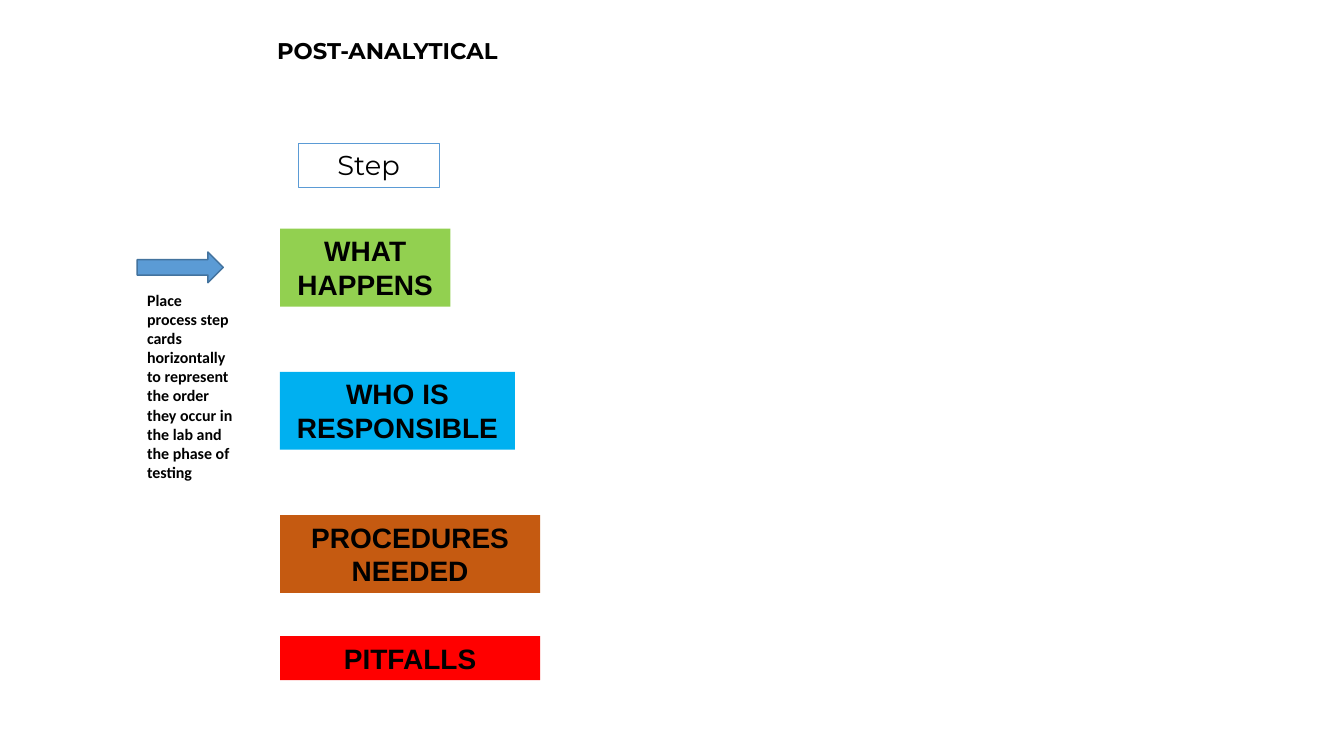
"""Build the post-analytical process step slide."""
from dataclasses import dataclass
from typing import Optional

import pptx
import pptx.dml.color
import pptx.enum.shapes
import pptx.enum.text
import pptx.shapes.autoshape
import pptx.slide
import pptx.util

Pt = pptx.util.Pt
RGBColor = pptx.dml.color.RGBColor
PP_ALIGN = pptx.enum.text.PP_ALIGN
MSO_ANCHOR = pptx.enum.text.MSO_ANCHOR
MSO_AUTO_SIZE = pptx.enum.text.MSO_AUTO_SIZE
MSO_SHAPE = pptx.enum.shapes.MSO_SHAPE

BLACK = RGBColor(0x00, 0x00, 0x00)
BLUE = RGBColor(0x5B, 0x9B, 0xD5)
DARK_BLUE = RGBColor(0x43, 0x73, 0x9E)
GREEN = RGBColor(0x92, 0xD0, 0x50)
SKY = RGBColor(0x00, 0xB0, 0xF0)
BROWN = RGBColor(0xC5, 0x5A, 0x11)
RED = RGBColor(0xFF, 0x00, 0x00)

CARD_LEFT = 200
CARD_TOP = 163.4
CARD_PITCH = 102.25
ONE_LINE = 31.6
TWO_LINES = 55.6


@dataclass(frozen=True)
class Card:
    text: str
    left: float
    top: float
    width: float
    height: float
    fill: Optional[RGBColor] = None
    line: Optional[RGBColor] = None
    font: str = "Arial"
    size: float = 20
    bold: bool = True


CARDS = [
    Card("Step", 213, 102.2, 100.8, ONE_LINE, line=BLUE,
         font="Montserrat", size=19.5, bold=False),
    Card("WHAT HAPPENS", CARD_LEFT, CARD_TOP, 121.7, TWO_LINES, GREEN),
    Card("WHO IS RESPONSIBLE", CARD_LEFT, CARD_TOP + CARD_PITCH, 167.8,
         TWO_LINES, SKY),
    Card("PROCEDURES NEEDED", CARD_LEFT, CARD_TOP + 2 * CARD_PITCH, 185.8,
         TWO_LINES, BROWN),
    Card("PITFALLS", CARD_LEFT, 454.3, 185.8, ONE_LINE, RED),
]


def write_text(shape: pptx.shapes.autoshape.Shape, text: str, font: str,
               size: float, bold: bool, alignment: PP_ALIGN) -> None:
    frame = shape.text_frame
    frame.text = text
    frame.word_wrap = True
    frame.vertical_anchor = MSO_ANCHOR.TOP
    paragraph = frame.paragraphs[0]
    paragraph.alignment = alignment
    paragraph.font.name = font
    paragraph.font.size = Pt(size)
    paragraph.font.bold = bold
    paragraph.font.color.rgb = BLACK


def style_shape(shape: pptx.shapes.autoshape.Shape, fill: Optional[RGBColor],
                line: Optional[RGBColor], line_width: float) -> None:
    shape.shadow.inherit = False
    if fill is None:
        shape.fill.background()
    else:
        shape.fill.solid()
        shape.fill.fore_color.rgb = fill
    if line is None:
        shape.line.fill.background()
    else:
        shape.line.color.rgb = line
        shape.line.width = Pt(line_width)


def add_title(slide: pptx.slide.Slide) -> None:
    title = slide.shapes.title
    title.left, title.top = Pt(175), Pt(0)
    title.width, title.height = Pt(213), Pt(54.7)
    write_text(title, "POST-ANALYTICAL", "Montserrat", 16.2, True, PP_ALIGN.CENTER)
    title.text_frame.auto_size = MSO_AUTO_SIZE.NONE
    title.text_frame.margin_top = Pt(26.4)
    title.text_frame.margin_right = Pt(17)


def add_card(slide: pptx.slide.Slide, card: Card) -> None:
    shape = slide.shapes.add_shape(MSO_SHAPE.RECTANGLE, Pt(card.left), Pt(card.top),
                                   Pt(card.width), Pt(card.height))
    style_shape(shape, card.fill, card.line, 0.75)
    write_text(shape, card.text, card.font, card.size, card.bold, PP_ALIGN.CENTER)
    shape.text_frame.auto_size = MSO_AUTO_SIZE.SHAPE_TO_FIT_TEXT


def add_instruction(slide: pptx.slide.Slide) -> None:
    arrow = slide.shapes.add_shape(MSO_SHAPE.RIGHT_ARROW, Pt(98), Pt(180),
                                   Pt(61.5), Pt(22))
    style_shape(arrow, BLUE, DARK_BLUE, 1)
    note = slide.shapes.add_textbox(Pt(98), Pt(203.8), Pt(77), Pt(145.5))
    write_text(note, "Place process step cards horizontally to represent the order "
               "they occur in the lab and the phase of testing",
               "Calibri", 11.4, True, PP_ALIGN.LEFT)
    note.text_frame.auto_size = MSO_AUTO_SIZE.SHAPE_TO_FIT_TEXT


def main() -> None:
    presentation = pptx.Presentation()
    presentation.slide_width = Pt(960)
    presentation.slide_height = Pt(540)
    slide = presentation.slides.add_slide(presentation.slide_layouts[5])
    add_title(slide)
    add_instruction(slide)
    for card in CARDS:
        add_card(slide, card)
    presentation.save("out.pptx")


if __name__ == "__main__":
    main()
